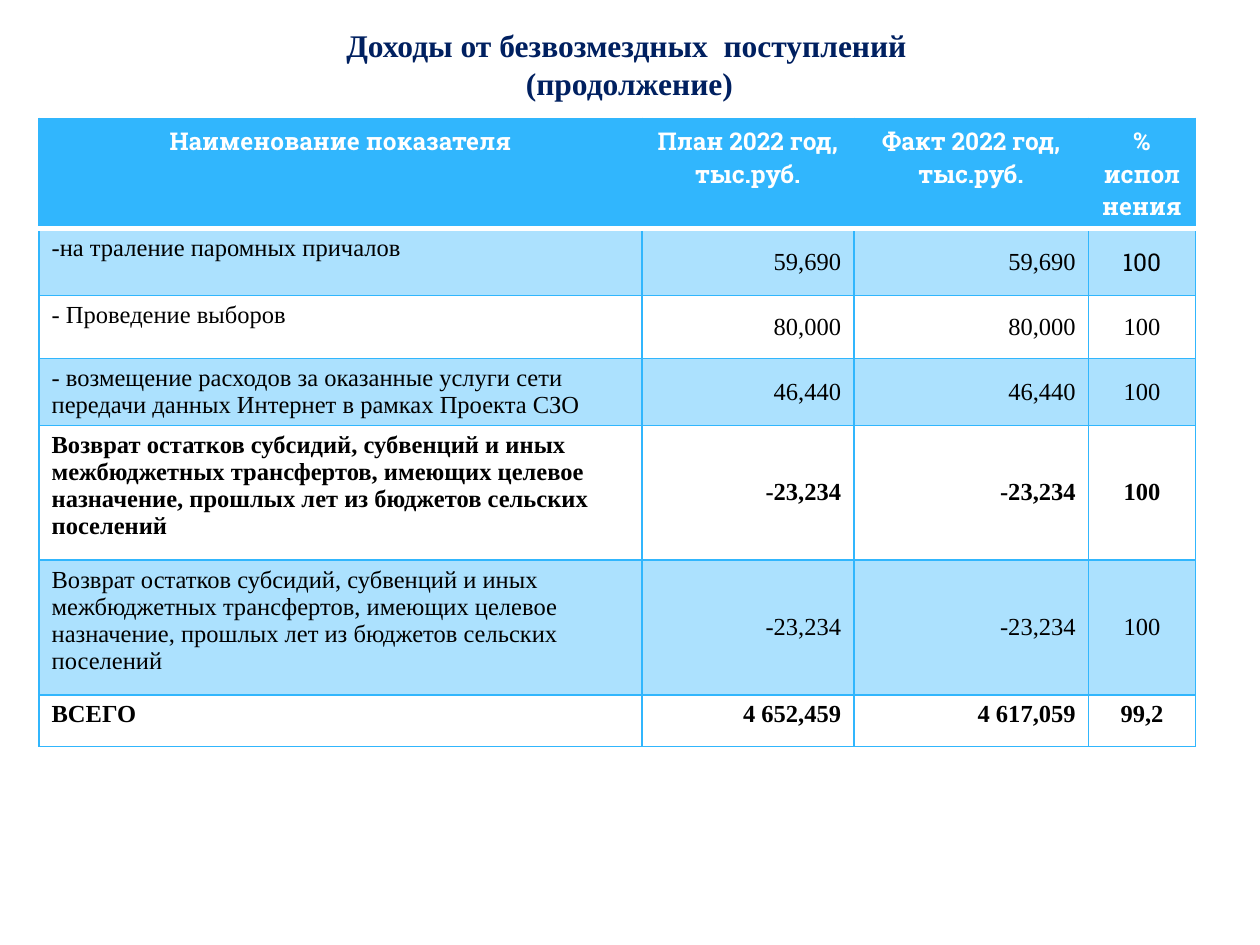
from dataclasses import dataclass

from lxml.etree import SubElement
from pptx import Presentation
from pptx.dml.color import RGBColor
from pptx.enum.text import MSO_ANCHOR, PP_ALIGN
from pptx.oxml import parse_xml
from pptx.oxml.ns import nsdecls, qn
from pptx.util import Inches, Pt


@dataclass(frozen=True)
class Theme:
    title: str = "002060"
    accent: str = "31B6FD"
    white: str = "FFFFFF"
    text: str = "000000"
    body_font: str = "Times New Roman"
    header_font: str = "Roboto Slab"
    title_size: int = 18
    table_size: int = 14
    band_opacity: int = 40
    grid_width: int = 1
    rule_width: int = 3


THEME = Theme()

HEADERS = ["Наименование показателя", "План 2022 год, тыс.руб.",
           "Факт 2022 год, тыс.руб.", "% исполнения"]
REFUND = ("Возврат остатков субсидий, субвенций и иных межбюджетных трансфертов, "
          "имеющих целевое назначение, прошлых лет из бюджетов сельских поселений")
ROWS = [
    ["-на траление паромных причалов", "59,690", "59,690", "100"],
    ["- Проведение выборов", "80,000", "80,000", "100"],
    ["- возмещение расходов за оказанные услуги сети передачи данных Интернет "
     "в рамках Проекта СЗО", "46,440", "46,440", "100"],
    [REFUND, "-23,234", "-23,234", "100"],
    [REFUND, "-23,234", "-23,234", "100"],
    ["ВСЕГО", "4 652,459", "4 617,059", "99,2"],
]
BOLD_ROWS = {4, 6}
COL_WIDTHS = [4.78, 1.68, 1.86, 0.85]
ROW_HEIGHTS = [0.87, 0.53, 0.5, 0.53, 1.07, 1.07, 0.41]
ALIGNMENTS = [PP_ALIGN.LEFT, PP_ALIGN.RIGHT, PP_ALIGN.RIGHT, PP_ALIGN.CENTER]


def set_font(p, name, size, color, bold):
    p.font.name = name
    p.font.size = Pt(size)
    p.font.color.rgb = RGBColor.from_string(color)
    p.font.bold = bold


def add_title(slide, left, top, width, height):
    tf = slide.shapes.add_textbox(left, top, width, height).text_frame
    tf.word_wrap = True
    tf.text = "Доходы от безвозмездных  поступлений\n(продолжение)"
    for p in tf.paragraphs:
        set_font(p, THEME.body_font, THEME.title_size, THEME.title, True)
    tf.paragraphs[1].alignment = PP_ALIGN.CENTER


def set_borders(cell, row):
    """Draw the blue grid, with a thick white rule under the header."""
    grid = (THEME.accent, THEME.grid_width)
    rule = (THEME.white, THEME.rule_width)
    sides = {"L": grid, "R": grid,
             "T": rule if row == 1 else grid,
             "B": rule if row == 0 else grid}
    tc_pr = cell._tc.get_or_add_tcPr()
    for i, (side, (color, width)) in enumerate(sides.items()):
        tc_pr.insert(i, parse_xml(
            f'<a:ln{side} {nsdecls("a")} w="{Pt(width)}"><a:solidFill>'
            f'<a:srgbClr val="{color}"/></a:solidFill></a:ln{side}>'))


def fill_cell(cell, row):
    """Fill the header solid and odd rows with a translucent band."""
    if row and row % 2 == 0:
        cell.fill.background()
        return
    cell.fill.solid()
    cell.fill.fore_color.rgb = RGBColor.from_string(THEME.accent)
    if row:
        color = cell._tc.tcPr.find(qn("a:solidFill")).find(qn("a:srgbClr"))
        SubElement(color, qn("a:alpha"), val=str(THEME.band_opacity * 1000))


def format_cell(cell, row, col, text):
    cell.text = text
    p = cell.text_frame.paragraphs[0]
    if row == 0:
        p.alignment = PP_ALIGN.CENTER
        set_font(p, THEME.header_font, THEME.table_size, THEME.white, True)
    else:
        font = THEME.header_font if (row, col) == (1, 3) else THEME.body_font
        p.alignment = ALIGNMENTS[col]
        set_font(p, font, THEME.table_size, THEME.text, row in BOLD_ROWS)
    centred = col > 0 and 0 < row < len(ROWS)
    cell.vertical_anchor = MSO_ANCHOR.MIDDLE if centred else MSO_ANCHOR.TOP
    fill_cell(cell, row)
    set_borders(cell, row)


def add_income_table(slide, left, top, width, height):
    """Scale the column and row proportions to the given box."""
    data = [HEADERS, *ROWS]
    table = slide.shapes.add_table(len(data), len(HEADERS), left, top, width, height).table
    table.first_row = False
    table.horz_banding = False
    for column, share in zip(table.columns, COL_WIDTHS):
        column.width = int(width * share / sum(COL_WIDTHS))
    for row, share in zip(table.rows, ROW_HEIGHTS):
        row.height = int(height * share / sum(ROW_HEIGHTS))
    for r, values in enumerate(data):
        for c, text in enumerate(values):
            format_cell(table.cell(r, c), r, c, text)


def main():
    prs = Presentation()
    prs.slide_width, prs.slide_height = Inches(10), Inches(7.5)
    slide = prs.slides.add_slide(prs.slide_layouts[6])
    add_income_table(slide, Inches(0.31), Inches(0.94), Inches(9.18), Inches(4.98))
    add_title(slide, Inches(2.65), Inches(0.16), Inches(4.69), Inches(0.71))
    prs.save("out.pptx")


if __name__ == "__main__":
    main()
